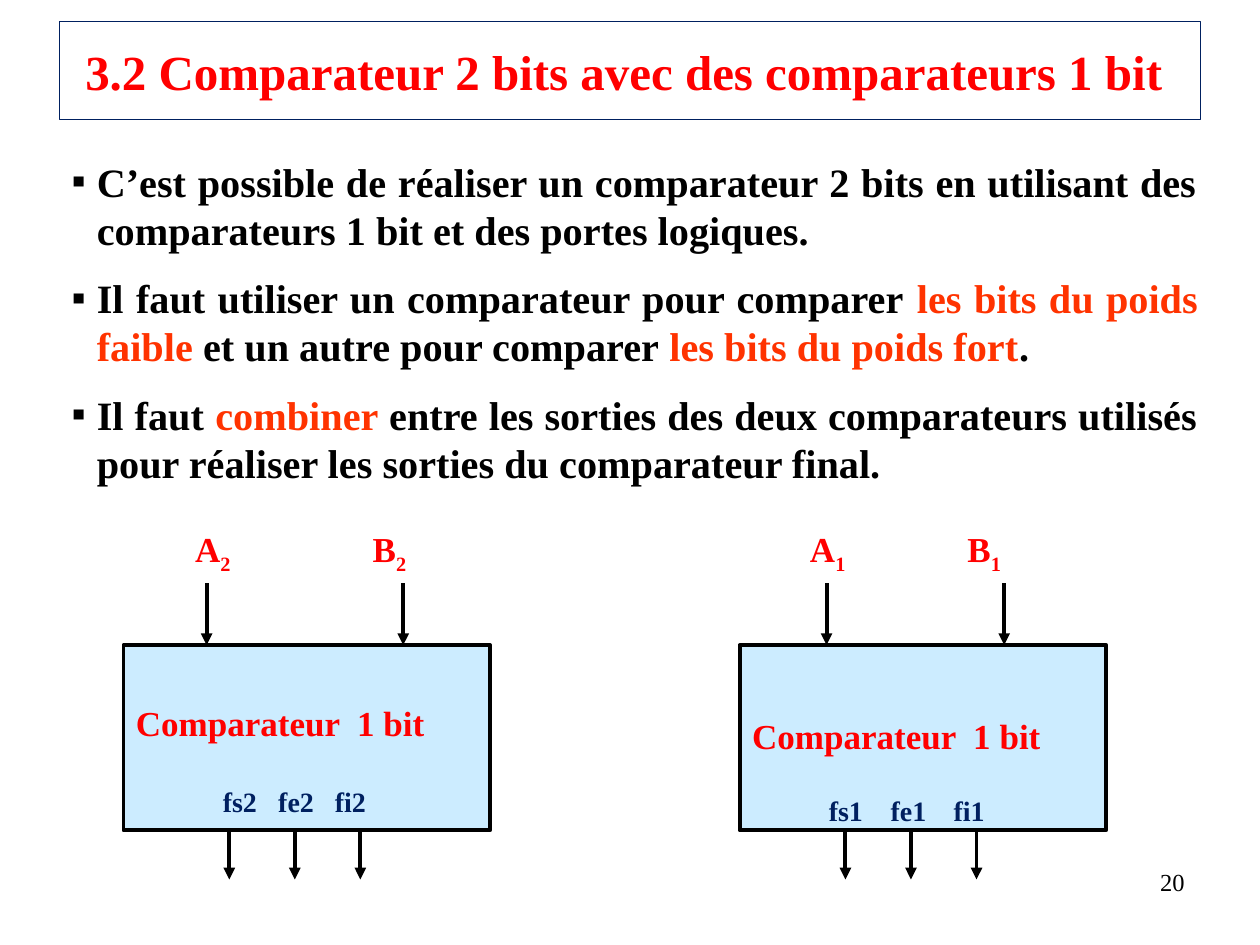
from dataclasses import dataclass
from lxml.etree import SubElement as Sub
from pptx import Presentation
from pptx.dml.color import RGBColor as Rgb
from pptx.enum.shapes import MSO_CONNECTOR as Link, MSO_SHAPE as Form
from pptx.enum.text import MSO_ANCHOR as Anchor, PP_ALIGN as Align
from pptx.oxml.ns import qn
from pptx.util import Inches, Pt

COLS, ROWS = 100, 75  # grid of the slide; every cell is a tenth of an inch


@dataclass(frozen=True)
class Theme:
    font: str = "Times New Roman"
    ink: str = "000000"
    navy: str = "002060"
    red: str = "FF0000"
    orange: str = "FF3300"
    sky: str = "CCECFF"
    head: int = 28
    body: int = 23
    label: int = 20
    port: int = 16
    small: int = 14
    thin: float = 0.75
    thick: float = 2.25


T = Theme()


def cell(n):
    return Inches(n / 10)


def area(x, y, w, h):
    return [cell(n) for n in (x, y, w, h)]


def write(para, text, size=T.body, color=T.ink, bold=True, base=0):
    """Add one run; base is a shift in percent, negative for a subscript."""
    run = para.add_run()
    run.text = text
    font = run.font
    font.name, font.size, font.bold = T.font, Pt(size), bold
    font.color.rgb = Rgb.from_string(color)
    if base:
        run._r.get_or_add_rPr().set("baseline", str(base * 1000))


def set_tabs(para, stops):
    tabs = Sub(para._p.get_or_add_pPr(), qn("a:tabLst"))
    for stop in stops:
        Sub(tabs, qn("a:tab"), pos=str(cell(stop)), algn="l")


def set_bullet(para, mark="▪"):
    props = para._p.get_or_add_pPr()
    props.set("marL", str(cell(2)))
    props.set("indent", str(cell(-2)))
    Sub(props, qn("a:buFont"), typeface=T.font)
    Sub(props, qn("a:buChar"), char=mark)


def add_text(slide, *place):
    frame = slide.shapes.add_textbox(*area(*place)).text_frame
    frame.word_wrap = True
    return frame


def add_title(slide, text):
    title = slide.shapes.title
    title.left, title.top, title.width, title.height = area(4.7, 1.7, 90.6, 7.8)
    title.line.color.rgb = Rgb.from_string(T.navy)
    title.line.width = Pt(T.thin)
    frame = title.text_frame
    frame.vertical_anchor = Anchor.MIDDLE
    frame.margin_right = cell(2)
    para = frame.paragraphs[0]
    para.alignment = Align.CENTER
    write(para, text, T.head, T.red)


def add_list(slide, items):
    """Each item is a list of pieces, plain and highlighted by turns."""
    frame = add_text(slide, 4.7, 11.95, 91.4, 28.1)
    for i, item in enumerate(items):
        para = frame.paragraphs[0] if i == 0 else frame.add_paragraph()
        para.alignment = Align.JUSTIFY
        para.line_spacing = Pt(27.6)
        if i:
            para.space_before = Pt(11.4)
        set_bullet(para)
        for j, piece in enumerate(item):
            write(para, piece, color=T.orange if j % 2 else T.ink)


def add_arrow(slide, x, top, end):
    line = slide.shapes.add_connector(
        Link.STRAIGHT, cell(x), cell(top), cell(x), cell(end))
    line.line.color.rgb = Rgb.from_string(T.ink)
    line.line.width = Pt(T.thick)
    Sub(line.line._get_or_add_ln(), qn("a:tailEnd"), type="triangle")
    Sub(line._element.spPr, qn("a:effectLst"))


def add_block(slide, n, left, inset, gap, ports, inputs, names, step):
    """Draw comparator n; ports, inputs and names are offsets in columns."""
    top, wide, high = 51.2, 29.1, 14.7
    box = slide.shapes.add_shape(Form.RECTANGLE, *area(left, top, wide, high))
    box.shadow.inherit = False
    box.fill.solid()
    box.fill.fore_color.rgb = Rgb.from_string(T.sky)
    box.line.color.rgb = Rgb.from_string(T.ink)
    box.line.width = Pt(T.thick)
    frame = box.text_frame
    frame.vertical_anchor = Anchor.TOP
    frame.margin_top = cell(inset)
    first, last = frame.paragraphs[0], frame.add_paragraph()
    first.alignment = last.alignment = Align.LEFT
    write(first, "Comparateur  1 bit", T.label, T.red)
    last.space_before = Pt(gap)
    set_tabs(last, ports)
    write(last, "".join(f"\t{p}{n}" for p in ("fs", "fe", "fi")), T.port, T.navy)

    para = add_text(slide, left + names, 41.4, 22.2, 4.4).paragraphs[0]
    set_tabs(para, [step])
    for text, base in (("A", 0), (str(n), -25), ("\tB", 0), (str(n), -25)):
        write(para, text, T.label, T.red, base=base)

    for x in inputs:
        add_arrow(slide, left + x, 46.3, top)
    for i in range(3):
        add_arrow(slide, left + 8.4 + 5.2 * i, top + high, 69.8)


def add_number(slide, text):
    para = add_text(slide, 71.7, 68.3, 23.3, 5.2).paragraphs[0]
    para.alignment = Align.RIGHT
    write(para, text, T.small, bold=False)


def main():
    deck = Presentation()
    deck.slide_width, deck.slide_height = cell(COLS), cell(ROWS)
    slide = deck.slides.add_slide(deck.slide_layouts[5])
    add_title(slide, "3.2 Comparateur 2 bits avec des comparateurs 1 bit")
    add_list(slide, [
        ["C’est possible de réaliser un comparateur 2 bits en utilisant des "
         "comparateurs 1 bit et des portes logiques."],
        ["Il faut utiliser un comparateur pour comparer ",
         "les bits du poids faible", " et un autre pour comparer ",
         "les bits du poids fort", "."],
        ["Il faut ", "combiner ", "entre les sorties des deux comparateurs "
         "utilisés pour réaliser les sorties du comparateur final."],
    ])
    add_block(slide, 1, left=58.7, inset=5.5, gap=21, ports=(6.1, 11, 16),
              inputs=(6.9, 21), names=4.6, step=12.5)
    add_block(slide, 2, left=9.8, inset=4.5, gap=23, ports=(6.9, 11.3, 15.8),
              inputs=(6.6, 22.2), names=4.7, step=14.1)
    add_number(slide, "20")
    deck.save("out.pptx")


if __name__ == "__main__":
    main()
